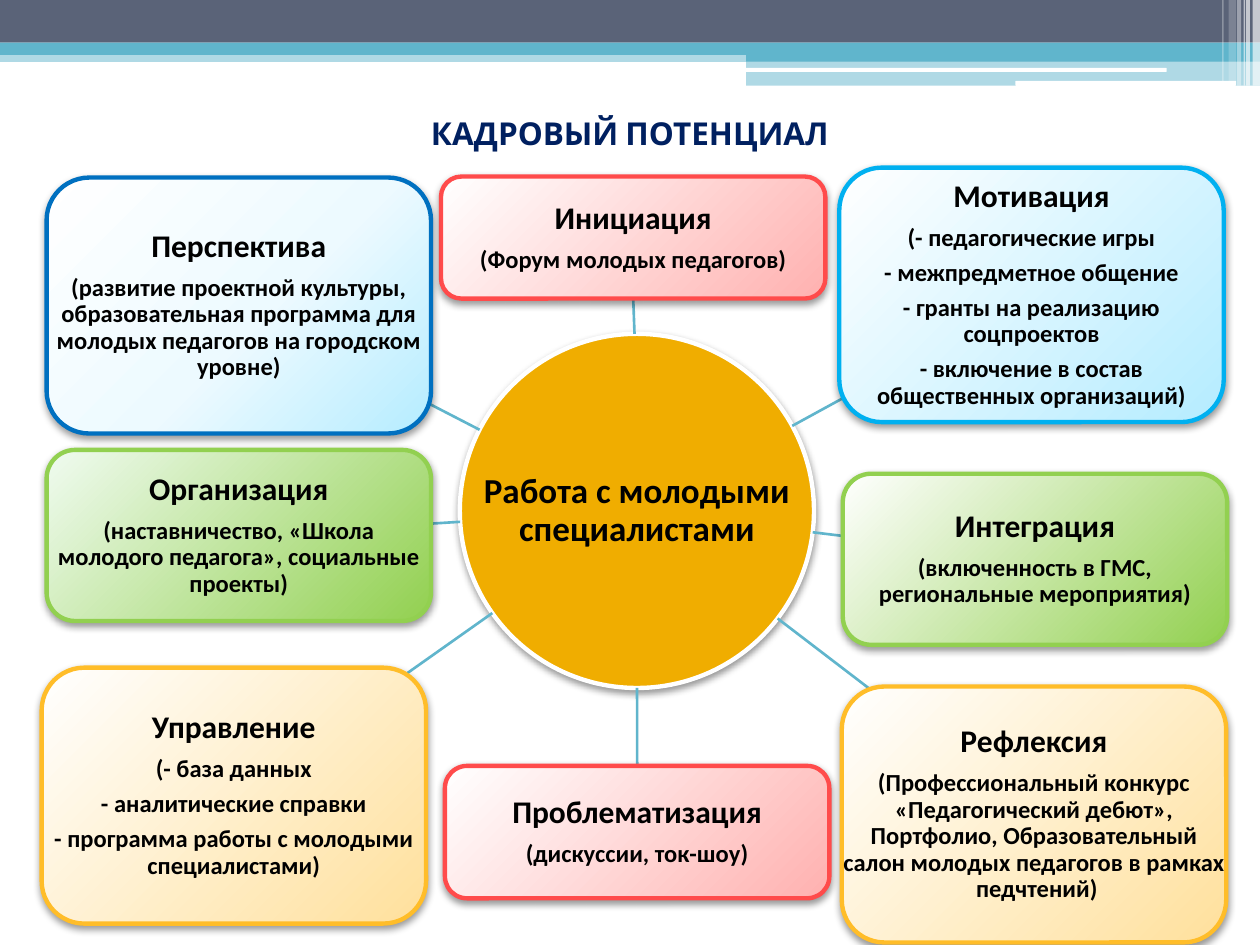
"""Build the slide on work with young specialists: a hub circle with eight linked boxes."""
from math import hypot

from pptx import Presentation
from pptx.dml.color import RGBColor
from pptx.enum.shapes import MSO_CONNECTOR, MSO_SHAPE
from pptx.enum.text import MSO_ANCHOR, PP_ALIGN
from pptx.oxml import parse_xml
from pptx.oxml.ns import nsdecls, qn
from pptx.util import Cm, Pt

RECT, ROUNDED, OVAL = MSO_SHAPE.RECTANGLE, MSO_SHAPE.ROUNDED_RECTANGLE, MSO_SHAPE.OVAL
STRAIGHT = MSO_CONNECTOR.STRAIGHT
MIDDLE, CENTER = MSO_ANCHOR.MIDDLE, PP_ALIGN.CENTER

WHITE = RGBColor(0xFF, 0xFF, 0xFF)
BLACK = RGBColor(0x00, 0x00, 0x00)
NAVY = RGBColor(0x00, 0x20, 0x60)
SLATE = RGBColor(0x5A, 0x63, 0x78)
TEAL = RGBColor(0x60, 0xB5, 0xCC)
AMBER = RGBColor(0xF0, 0xAD, 0x00)
RED, PINK = RGBColor(0xFF, 0x4B, 0x4B), RGBColor(0xFF, 0xB1, 0xB0)
GREEN, MINT = RGBColor(0x92, 0xD0, 0x50), RGBColor(0xF0, 0xFB, 0xF0)
GOLD, CREAM = RGBColor(0xFF, 0xBD, 0x29), RGBColor(0xFF, 0xE0, 0x9C)
SKY, ICE = RGBColor(0x00, 0xB0, 0xF0), RGBColor(0xB5, 0xEC, 0xFF)
BLUE, FROST = RGBColor(0x00, 0x70, 0xC0), RGBColor(0xED, 0xFA, 0xFF)

SLIDE_W, SLIDE_H = 25.4, 19.05
TITLE = "КАДРОВЫЙ ПОТЕНЦИАЛ"
HUB = "Работа с молодыми специалистами"
HUB_LEFT, HUB_TOP, HUB_SIZE = 9.27, 6.73, 7.14
BOX_W = 7.75
TUCK = 0.3

BANNER = [
    (RECT, 0, 1.02, 25.4, 0.23, TEAL, 50),
    (RECT, 0, 0, 25.4, 0.86, SLATE, 100),
    (RECT, 0, 0.86, 25.4, 0.25, TEAL, 100),
    (RECT, 15.04, 0.99, 10.36, 0.25, TEAL, 100),
    (RECT, 15.04, 1.22, 10.36, 0.51, TEAL, 50),
    (ROUNDED, 15.01, 1.37, 8.51, 0.08, WHITE, 100),
    (ROUNDED, 20.47, 1.63, 4.45, 0.1, WHITE, 100),
    (RECT, 25.25, 0, 0.15, 1.73, WHITE, 65),
    (RECT, 25.12, 0, 0.08, 1.73, WHITE, 65),
    (RECT, 25.07, 0, 0.03, 1.73, WHITE, 60),
    (RECT, 24.94, 0, 0.08, 1.73, WHITE, 40),
    (RECT, 24.77, 0, 0.15, 1.63, WHITE, 20),
    (RECT, 24.64, 0, 0.03, 1.63, WHITE, 30),
]

RED_FADE = [(0, WHITE), (100, PINK)]
GOLD_FADE = [(0, WHITE), (100, CREAM)]

# left, top, height, joined side, border, gradient, heading, details
BOXES = [
    (8.89, 3.56, 2.46, 2, RED, RED_FADE, "Инициация", ["(Форум молодых педагогов)"]),
    (8.97, 15.44, 2.67, 0, RED, RED_FADE, "Проблематизация", ["(дискуссии, ток-шоу)"]),
    (16.99, 9.55, 3.45, None, GREEN, [(0, WHITE), (100, GREEN)], "Интеграция",
     ["(включенность в ГМС, региональные мероприятия)"]),
    (16.97, 13.84, 5.16, None, GOLD, GOLD_FADE, "Рефлексия",
     ["(Профессиональный конкурс «Педагогический дебют», Портфолио, "
      "Образовательный салон молодых педагогов в рамках  педчтений)"]),
    (16.92, 3.38, 5.13, None, SKY, [(0, WHITE), (100, ICE)], "Мотивация",
     ["(- педагогические игры", "- межпредметное общение",
      "- гранты на реализацию соцпроектов",
      "- включение в состав общественных организаций)"]),
    (0.84, 13.46, 5.16, None, GOLD, GOLD_FADE, "Управление",
     ["(- база данных", "- аналитические справки",
      "- программа работы с молодыми специалистами)"]),
    (0.94, 3.58, 5.16, None, BLUE, [(0, WHITE), (55, FROST), (100, ICE)], "Перспектива",
     ["(развитие проектной культуры, образовательная программа "
      "для молодых педагогов на городском уровне)"]),
    (0.94, 9.07, 3.45, None, GREEN, [(0, MINT), (100, GREEN)], "Организация",
     ["(наставничество, «Школа молодого педагога», социальные проекты)"]),
]


def add_outline(shapes, kind, left, top, width, height):
    shape = shapes.add_shape(kind, Cm(left), Cm(top), Cm(width), Cm(height))
    shape.shadow.inherit = False
    return shape


def add_band(shapes, kind, left, top, width, height, color, opacity):
    band = add_outline(shapes, kind, left, top, width, height)
    band.fill.solid()
    band.fill.fore_color.rgb = color
    band.line.fill.background()
    if opacity < 100:
        tone = band._element.spPr.find(".//" + qn("a:srgbClr"))
        tone.append(parse_xml(f'<a:alpha {nsdecls("a")} val="{opacity * 1000}"/>'))


def add_border_and_shadow(shape, color):
    shape.line.color.rgb = color
    shape.line.width = Pt(2.5)
    shape._element.spPr.find(qn("a:effectLst")).append(parse_xml(
        f'<a:outerShdw {nsdecls("a")} blurRad="{Pt(4.1)}" dist="{Pt(2)}" dir="5400000" '
        'rotWithShape="0"><a:srgbClr val="000000"><a:alpha val="40000"/></a:srgbClr>'
        '</a:outerShdw>'))


def fill_with_gradient(shape, stops):
    marks = "".join(f'<a:gs pos="{pos * 1000}"><a:srgbClr val="{color}"/></a:gs>'
                    for pos, color in stops)
    shape._element.spPr.insert(2, parse_xml(
        f'<a:gradFill {nsdecls("a")} rotWithShape="1"><a:gsLst>{marks}</a:gsLst>'
        '<a:path path="circle"><a:fillToRect l="-40000" t="-90000" r="140000" b="190000"/>'
        '</a:path></a:gradFill>'))


def add_text(shapes, left, top, width, height, lines, font="Calibri", color=BLACK, spacing=0.9):
    frame = shapes.add_textbox(Cm(left), Cm(top), Cm(width), Cm(height)).text_frame
    frame.word_wrap = True
    frame.vertical_anchor = MIDDLE
    frame.margin_left = frame.margin_right = frame.margin_top = frame.margin_bottom = Cm(0.03)
    for index, (words, size) in enumerate(lines):
        paragraph = frame.add_paragraph() if index else frame.paragraphs[0]
        paragraph.alignment = CENTER
        paragraph.line_spacing = spacing
        paragraph.space_after = Pt(round(size * 0.35, 1)) if spacing < 1 else Pt(0)
        run = paragraph.add_run()
        run.text = words
        run.font.name, run.font.size, run.font.bold = font, Pt(size), True
        run.font.color.rgb = color


def add_spoke(shapes, left, top, height):
    radius = HUB_SIZE / 2
    hub_x, hub_y = HUB_LEFT + radius, HUB_TOP + radius
    dx, dy = left + BOX_W / 2 - hub_x, top + height / 2 - hub_y
    distance = hypot(dx, dy)
    to_edge = distance * (1 - min(BOX_W / 2 / max(abs(dx), 0.01),
                                  height / 2 / max(abs(dy), 0.01)))
    start, end = radius / distance, (to_edge + TUCK) / distance
    spoke = shapes.add_connector(STRAIGHT, Cm(hub_x + dx * start), Cm(hub_y + dy * start),
                                 Cm(hub_x + dx * end), Cm(hub_y + dy * end))
    spoke.line.color.rgb = TEAL
    spoke.line.width = Pt(1.5)
    spoke._element.spPr.append(parse_xml(f'<a:effectLst {nsdecls("a")}/>'))
    return spoke


def main():
    deck = Presentation()
    deck.slide_width, deck.slide_height = Cm(SLIDE_W), Cm(SLIDE_H)
    shapes = deck.slides.add_slide(deck.slide_layouts[6]).shapes
    for band in BANNER:
        add_band(shapes, *band)

    hub_place = HUB_LEFT, HUB_TOP, HUB_SIZE, HUB_SIZE
    hub = add_outline(shapes, OVAL, *hub_place)
    hub.fill.solid()
    hub.fill.fore_color.rgb = AMBER
    add_border_and_shadow(hub, WHITE)
    add_text(shapes, *hub_place, [(HUB, 20)])

    for left, top, height, side, border, stops, heading, details in BOXES:
        spoke = add_spoke(shapes, left, top, height)
        box = add_outline(shapes, ROUNDED, left, top, BOX_W, height)
        fill_with_gradient(box, stops)
        add_border_and_shadow(box, border)
        if side is not None:
            spoke.end_connect(box, side)
        add_text(shapes, left, top, BOX_W, height,
                 [(heading, 18)] + [(detail, 14) for detail in details])

    add_text(shapes, 0, 1.19, SLIDE_W, 2.97, [(TITLE, 18)], "Cabin", NAVY, 1.0)
    deck.save("out.pptx")


if __name__ == "__main__":
    main()
